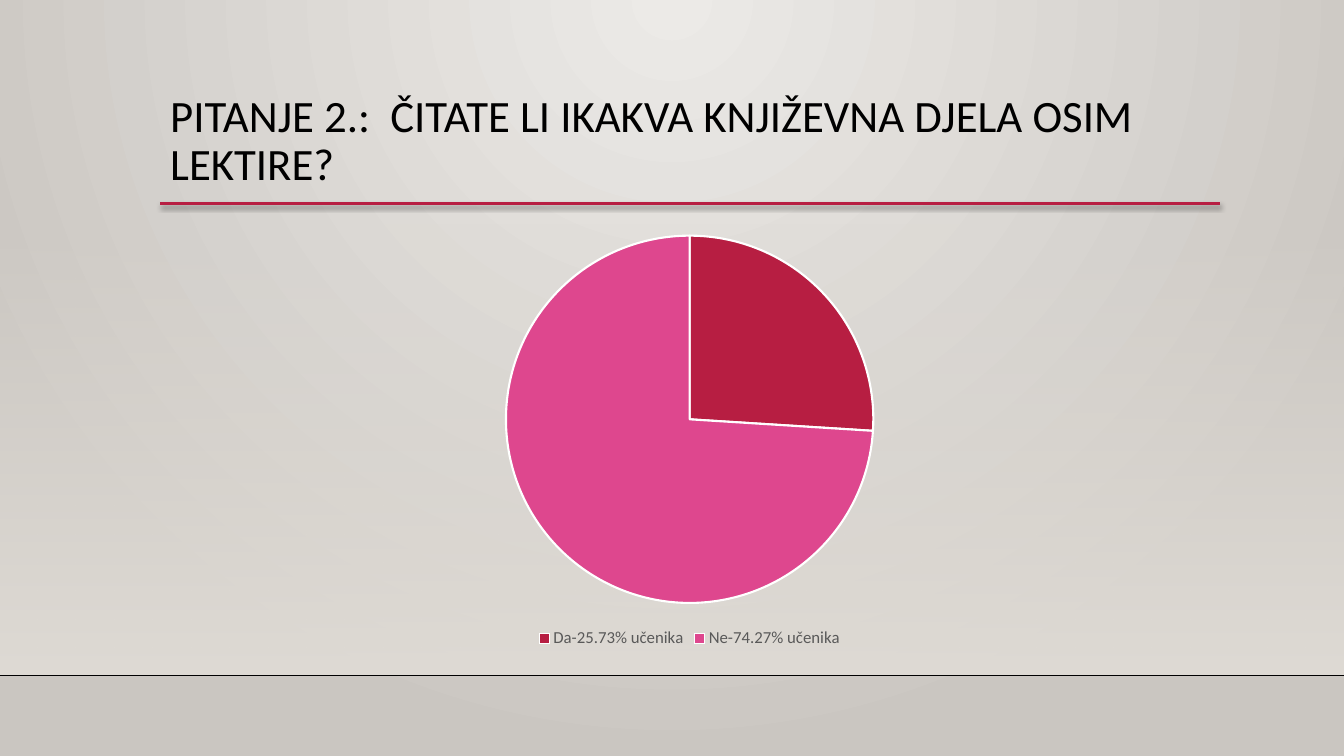
import pptx
import pptx.chart.data
import pptx.dml.color
import pptx.enum.chart
import pptx.enum.shapes
import pptx.enum.text
import pptx.oxml
import pptx.oxml.ns
import pptx.util
from pptx.dml.color import RGBColor
from pptx.util import Inches

BLACK = RGBColor(0x00, 0x00, 0x00)
WHITE = RGBColor(0xFF, 0xFF, 0xFF)
GREY_TEXT = RGBColor(0x59, 0x59, 0x59)
CENTRE_GREY = RGBColor(0xEC, 0xEA, 0xE7)
EDGE_GREY = RGBColor(0xCA, 0xC6, 0xC1)
WALL_GREY = RGBColor(0xDF, 0xDB, 0xD5)
CRIMSON = RGBColor(0xB7, 0x1E, 0x42)
PINK = RGBColor(0xDE, 0x47, 0x8E)

SLIDE_WIDTH, SLIDE_HEIGHT = 13.33, 7.5
FLOOR_TOP = 6.7
LEFT, WIDTH = 1.59, 10.5
ANSWERS = [
    ("Da-25.73% učenika", 26, CRIMSON),
    ("Ne-74.27% učenika", 74, PINK),
]


def make_element(tag, content="", attributes=""):
    namespace = pptx.oxml.ns.nsdecls("a")
    return pptx.oxml.parse_xml(f"<a:{tag} {namespace} {attributes}>{content}</a:{tag}>")


def set_gradient(fill, colors):
    fill.gradient()
    for stop, color in zip(fill.gradient_stops, colors):
        stop.color.rgb = color


def add_line(slide, left, right, y, color, weight, effect=""):
    line = slide.shapes.add_connector(
        pptx.enum.shapes.MSO_CONNECTOR.STRAIGHT,
        Inches(left), Inches(y), Inches(right), Inches(y))
    line.line.color.rgb = color
    line.line.width = pptx.util.Pt(weight)
    line.element.spPr.append(make_element("effectLst", effect))


def add_text(slide, text, box, *, size, color, font, line_spacing, anchor):
    shape = slide.shapes.add_textbox(*map(Inches, box))
    frame = shape.text_frame
    frame.word_wrap = True
    frame.vertical_anchor = anchor
    paragraph = frame.paragraphs[0]
    paragraph.text = text
    paragraph.line_spacing = line_spacing
    paragraph.font.size = pptx.util.Pt(size)
    paragraph.font.name = font
    paragraph.font.color.rgb = color


def add_backdrop(slide):
    """Radial background, fading wall and floor edge."""
    set_gradient(slide.background.fill, (CENTRE_GREY, EDGE_GREY))
    gradient = slide.element.xpath(".//p:bg//a:gradFill")[0]
    direction = gradient.find(pptx.oxml.ns.qn("a:lin"))
    gradient.replace(direction, make_element(
        "path", '<a:fillToRect l="50000" t="0" r="50000" b="100000"/>', 'path="circle"'))

    wall_top = 2.21
    wall = slide.shapes.add_shape(
        pptx.enum.shapes.MSO_SHAPE.RECTANGLE, 0, Inches(wall_top),
        Inches(SLIDE_WIDTH), Inches(FLOOR_TOP - wall_top))
    wall.shadow.inherit = False
    wall.line.fill.background()
    set_gradient(wall.fill, (WALL_GREY, WALL_GREY))
    wall.fill.gradient_angle = 270
    first_color = wall.element.xpath(".//a:gs/a:srgbClr")[0]
    first_color.append(make_element("alpha", attributes='val="0"'))

    add_line(slide, 0, SLIDE_WIDTH, FLOOR_TOP, BLACK, 1)


def add_title(slide, box):
    left, top, width, height = box
    shadow = ('<a:outerShdw blurRad="39370" dist="22860" dir="5400000">'
              '<a:srgbClr val="000000"><a:alpha val="35000"/></a:srgbClr></a:outerShdw>')
    add_line(slide, left, left + width + 0.01, top + height - 0.01, CRIMSON, 2.5, shadow)
    add_text(slide, "PITANJE 2.:  ČITATE LI IKAKVA KNJIŽEVNA DJELA OSIM LEKTIRE?", box,
             size=32, color=BLACK, font="Calibri", line_spacing=0.9,
             anchor=pptx.enum.text.MSO_ANCHOR.TOP)


def add_answer_pie(slide, box):
    data = pptx.chart.data.CategoryChartData()
    data.categories = [label for label, _, _ in ANSWERS]
    data.add_series("Series 1", [share for _, share, _ in ANSWERS])
    chart = slide.shapes.add_chart(
        pptx.enum.chart.XL_CHART_TYPE.PIE, *map(Inches, box), data).chart
    chart.has_title = False
    chart.font.name = "Arial"
    chart.font.size = pptx.util.Pt(10)
    chart.font.color.rgb = BLACK

    plot = chart.plots[0]
    plot.vary_by_categories = True
    for index, (_, _, color) in enumerate(ANSWERS):
        slice_format = plot.series[0].points[index].format
        slice_format.fill.solid()
        slice_format.fill.fore_color.rgb = color
        slice_format.line.color.rgb = WHITE
        slice_format.line.width = pptx.util.Pt(1.5)

    chart.has_legend = True
    legend = chart.legend
    legend.position = pptx.enum.chart.XL_LEGEND_POSITION.BOTTOM
    legend.include_in_layout = False
    legend.font.name = "Calibri"
    legend.font.size = pptx.util.Pt(12)
    legend.font.color.rgb = GREY_TEXT


def main():
    presentation = pptx.Presentation()
    presentation.slide_width = Inches(SLIDE_WIDTH)
    presentation.slide_height = Inches(SLIDE_HEIGHT)
    slide = presentation.slides.add_slide(presentation.slide_layouts[6])
    add_backdrop(slide)
    add_title(slide, (LEFT, 0.88, WIDTH, 1.15))
    add_answer_pie(slide, (LEFT, 2.2, WIDTH, 4.27))
    presentation.save("out.pptx")


if __name__ == "__main__":
    main()
